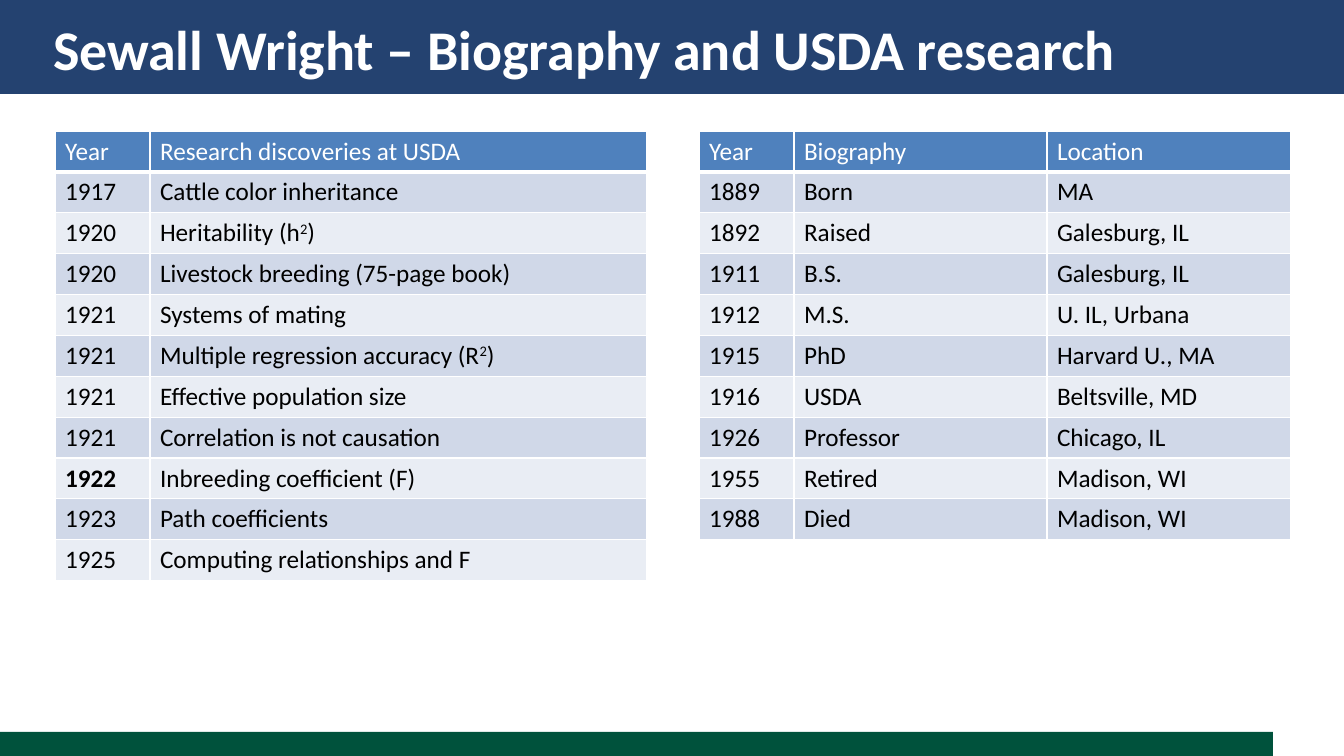
from dataclasses import dataclass

from lxml import etree
from pptx import Presentation
from pptx.dml.color import RGBColor
from pptx.enum.shapes import MSO_SHAPE
from pptx.enum.text import MSO_ANCHOR, PP_ALIGN
from pptx.oxml.ns import qn
from pptx.util import Emu, Pt

RECT = MSO_SHAPE.RECTANGLE
MIDDLE = MSO_ANCHOR.MIDDLE
LEFT = PP_ALIGN.LEFT
PX = 12192000 / 1344


@dataclass(frozen=True)
class Theme:
    font: str = "Calibri"
    title_size: int = 40
    table_size: int = 18
    white: str = "FFFFFF"
    black: str = "000000"
    navy: str = "244270"
    green: str = "00523C"
    header: str = "4F81BD"
    bands: tuple = ("D0D8E8", "E9EDF4")
    border: int = 1
    header_border: int = 3


def px(n):
    return Emu(round(n * PX))


class Deck:
    def __init__(self, theme):
        self.theme = theme
        self.prs = Presentation()
        self.prs.slide_width = px(1344)
        self.prs.slide_height = px(756)
        self.s = self.prs.slides.add_slide(self.prs.slide_layouts[5])

    def style(self, font, size, color, bold=False):
        font.name = self.theme.font
        font.size = Pt(size)
        font.bold = bold
        font.color.rgb = RGBColor.from_string(color)

    def bar(self, x, y, w, h, color):
        sp = self.s.shapes.add_shape(RECT, px(x), px(y), px(w), px(h))
        sp.shadow.inherit = False
        sp.fill.solid()
        sp.fill.fore_color.rgb = RGBColor.from_string(color)
        sp.line.fill.background()

    def title(self, text, x, y, w, h):
        sp = self.s.shapes.title
        self.s.shapes.element.append(sp.element)
        sp.left, sp.top, sp.width, sp.height = px(x), px(y), px(w), px(h)
        tf = sp.text_frame
        tf.text = text
        tf.word_wrap = True
        tf.vertical_anchor = MIDDLE
        tf.margin_left = tf.margin_right = tf.margin_top = tf.margin_bottom = 0
        p = tf.paragraphs[0]
        p.alignment = LEFT
        self.style(p.runs[0].font, self.theme.title_size, self.theme.white, True)

    def borders(self, cell, bottom):
        tcPr = cell._tc.get_or_add_tcPr()
        for side in "LRTB":
            width = bottom if side == "B" else self.theme.border
            ln = etree.SubElement(tcPr, qn(f"a:ln{side}"), w=str(Pt(width)))
            fill = etree.SubElement(ln, qn("a:solidFill"))
            etree.SubElement(fill, qn("a:srgbClr"), val=self.theme.white)

    def cell(self, cell, text, is_header, fill, bold):
        th = self.theme
        self.borders(cell, th.header_border if is_header else th.border)
        cell.fill.solid()
        cell.fill.fore_color.rgb = RGBColor.from_string(fill)
        p = cell.text_frame.paragraphs[0]
        base, power, tail = text.partition("^2")
        p.text = base
        if power:
            r = p.add_run()
            r.text = power[1:]
            r.font._element.set("baseline", "30000")
            p.add_run().text = tail
        for r in p.runs:
            self.style(r.font, th.table_size, th.white if is_header else th.black, bold)

    def table(self, x, y, widths, row_height, rows, bold_year=None):
        frame = self.s.shapes.add_table(len(rows), len(widths), px(x), px(y),
                                        px(sum(widths)), px(row_height * len(rows)))
        table = frame.table
        for column, width in zip(table.columns, widths):
            column.width = px(width)
        for i, row in enumerate(rows):
            fill = self.theme.bands[(i - 1) % 2] if i else self.theme.header
            for j, text in enumerate(row):
                self.cell(table.cell(i, j), text, i == 0, fill, text == bold_year)


RESEARCH = [
    ("Year", "Research discoveries at USDA"),
    ("1917", "Cattle color inheritance"),
    ("1920", "Heritability (h^2)"),
    ("1920", "Livestock breeding (75-page book)"),
    ("1921", "Systems of mating"),
    ("1921", "Multiple regression accuracy (R^2)"),
    ("1921", "Effective population size"),
    ("1921", "Correlation is not causation"),
    ("1922", "Inbreeding coefficient (F)"),
    ("1923", "Path coefficients"),
    ("1925", "Computing relationships and F"),
]
BIOGRAPHY = [
    ("Year", "Biography", "Location"),
    ("1889", "Born", "MA"),
    ("1892", "Raised", "Galesburg, IL"),
    ("1911", "B.S.", "Galesburg, IL"),
    ("1912", "M.S.", "U. IL, Urbana"),
    ("1915", "PhD", "Harvard U., MA"),
    ("1916", "USDA", "Beltsville, MD"),
    ("1926", "Professor", "Chicago, IL"),
    ("1955", "Retired", "Madison, WI"),
    ("1988", "Died", "Madison, WI"),
]


def main():
    theme = Theme()
    deck = Deck(theme)
    deck.bar(0, 732, 1273, 27, theme.green)
    deck.bar(0, 0, 1344, 94, theme.navy)
    deck.title("Sewall Wright – Biography and USDA research", 53, 13, 1237, 71)
    deck.table(55, 131, (95, 497), 40, RESEARCH, bold_year="1922")
    deck.table(699, 131, (95, 253, 244), 40, BIOGRAPHY)
    deck.prs.save("out.pptx")


if __name__ == "__main__":
    main()
